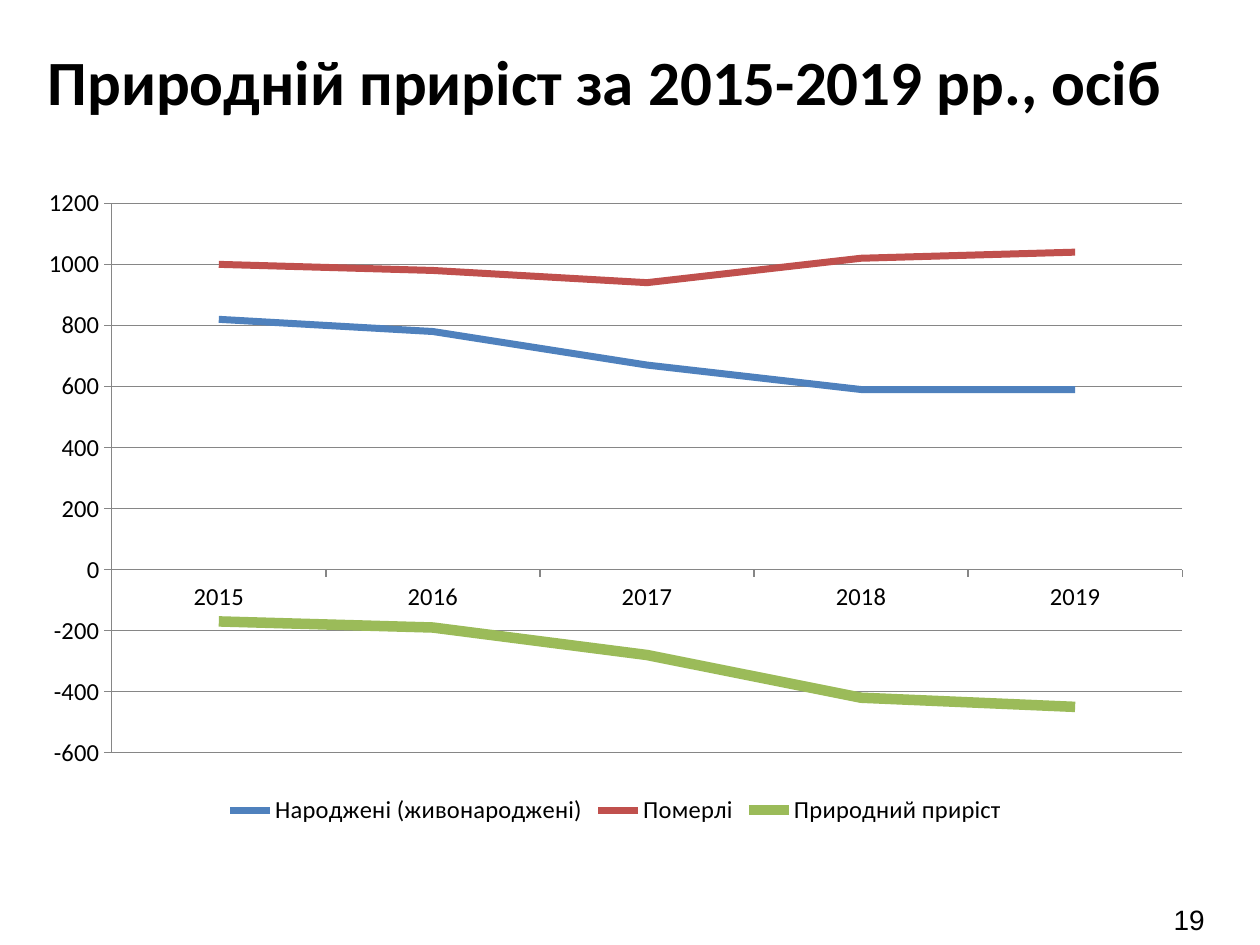
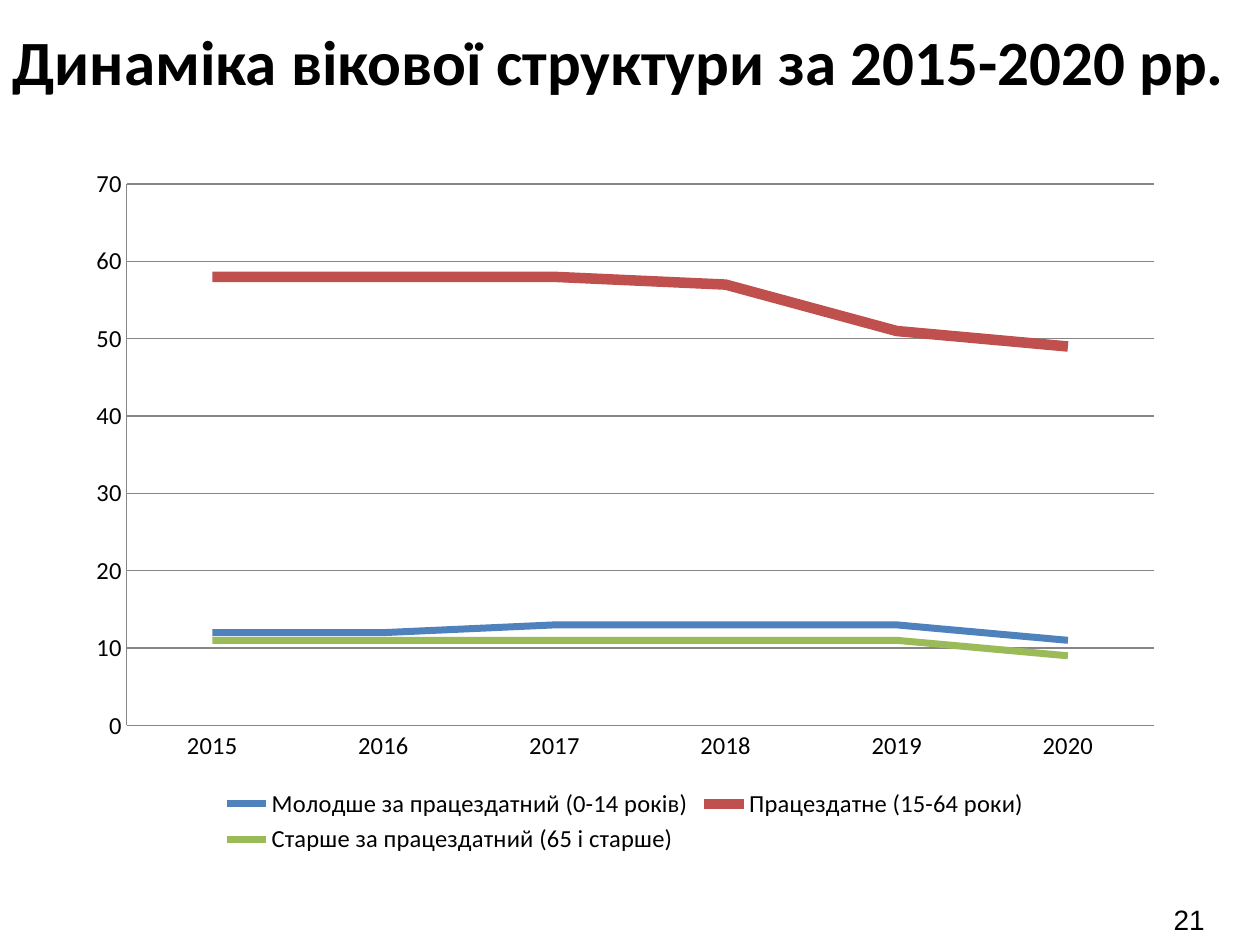
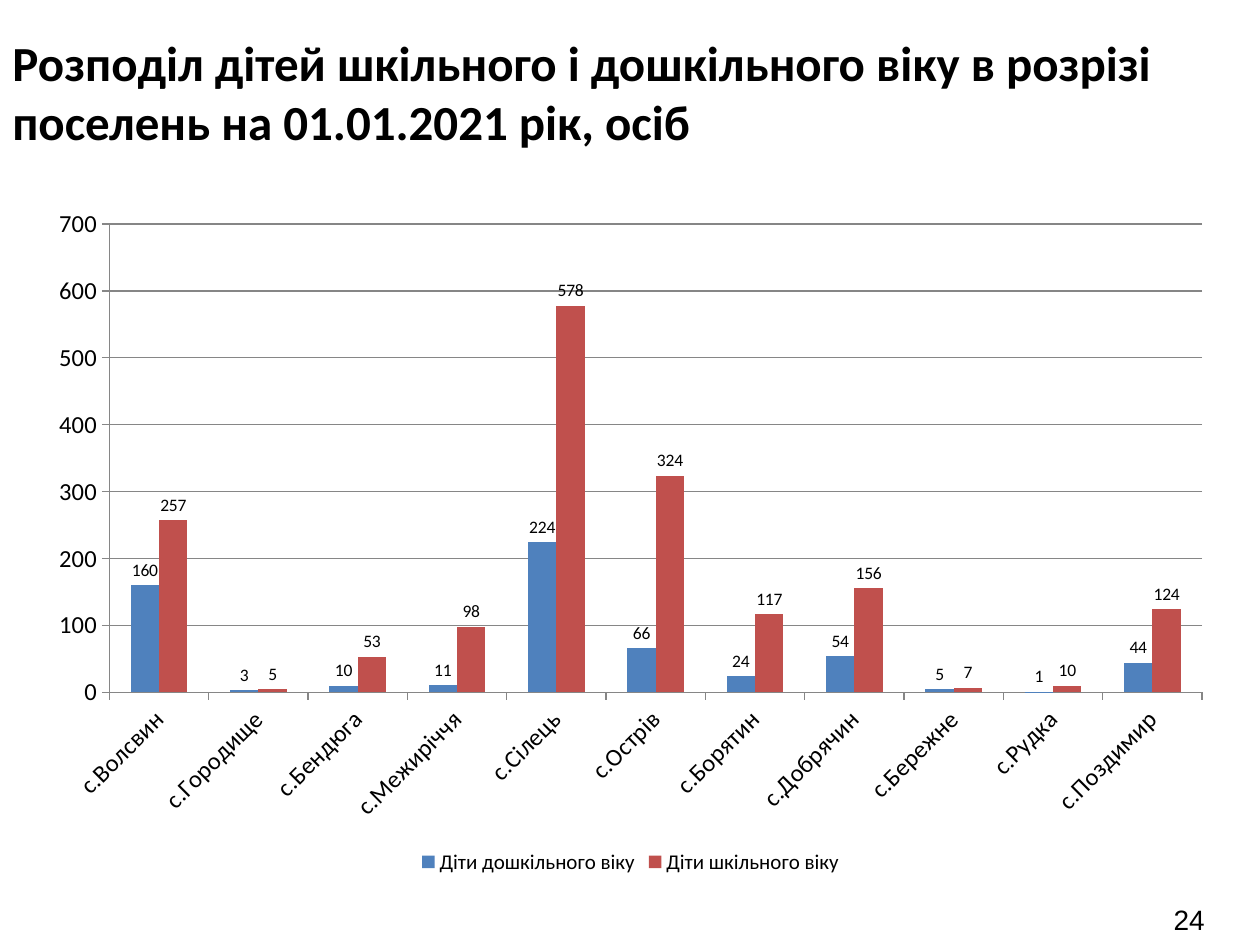
import pptx
import pptx.chart.data
import pptx.dml.color
import pptx.enum.chart
import pptx.enum.text
import pptx.util

Inches = pptx.util.Inches
Pt = pptx.util.Pt
BLACK, GRAY = "000000", "868686"
SERIES_COLORS = ["4F81BD", "C0504D", "9BBB59"]
LINE = pptx.enum.chart.XL_CHART_TYPE.LINE_MARKERS
COLUMN = pptx.enum.chart.XL_CHART_TYPE.COLUMN_CLUSTERED
TICK = pptx.enum.chart.XL_TICK_MARK


def color(value):
    return pptx.dml.color.RGBColor.from_string(value)


def add_text(slide, box, text, font_name, size, bold=False):
    shape = slide.shapes.add_textbox(*map(Inches, box))
    frame = shape.text_frame
    frame.word_wrap = True
    run = frame.paragraphs[0].add_run()
    run.text = text
    run.font.name = font_name
    run.font.size = Pt(size)
    run.font.bold = bold
    run.font.color.rgb = color(BLACK)
    return frame


slides = [
    {
        "number": "19",
        "title": "Природній приріст за 2015-2019 рр., осіб",
        "title_box": (0.28, 0.29, 9.45, 0.71),
        "title_size": 36,
        "chart_box": (0.2, 1.39, 9.37, 5.2),
        "type": LINE,
        "tick": TICK.OUTSIDE,
        "scale": (-600, 1200, 200),
        "legend_size": 14,
        "categories": ["2015", "2016", "2017", "2018", "2019"],
        "series": {
            "Народжені (живонароджені)": [820, 780, 670, 590, 590],
            "Померлі": [1000, 980, 940, 1020, 1040],
            "Природний приріст": [-170, -190, -280, -420, -450],
        },
        "bold_line": "Природний приріст",
    },
    {
        "number": "21",
        "title": "Динаміка вікової структури за 2015-2020 рр.",
        "title_box": (0, 0.13, 10, 0.71),
        "title_size": 36,
        "chart_box": (0.59, 1.23, 8.74, 5.59),
        "type": LINE,
        "tick": TICK.NONE,
        "scale": (0, 70, 10),
        "legend_size": 14,
        "categories": ["2015", "2016", "2017", "2018", "2019", "2020"],
        "series": {
            "Молодше за працездатний (0-14 років)": [12, 12, 13, 13, 13, 11],
            "Працездатне (15-64 роки)": [58, 58, 58, 57, 51, 49],
            "Старше за працездатний (65 і старше)": [11, 11, 11, 11, 11, 9],
        },
        "bold_line": "Працездатне (15-64 роки)",
    },
    {
        "number": "24",
        "title": "Розподіл дітей шкільного і дошкільного віку в розрізі поселень на 01.01.2021 рік, осіб",
        "title_box": (0, 0.21, 9.73, 1.35),
        "title_size": 28,
        "chart_box": (0.28, 1.55, 9.45, 5.43),
        "type": COLUMN,
        "tick": TICK.OUTSIDE,
        "scale": (0, 700, 100),
        "legend_size": 12,
        "categories": [
            "с.Волсвин", "с.Городище", "с.Бендюга", "с.Межиріччя", "с.Сілець", "с.Острів",
            "с.Борятин", "с.Добрячин", "с.Бережне", "с.Рудка", "с.Поздимир",
        ],
        "series": {
            "Діти дошкільного віку": [160, 3, 10, 11, 224, 66, 24, 54, 5, 1, 44],
            "Діти шкільного віку": [257, 5, 53, 98, 578, 324, 117, 156, 7, 10, 124],
        },
    },
]

presentation = pptx.Presentation()
presentation.slide_width = Inches(10)
presentation.slide_height = Inches(7.5)

for content in slides:
    slide = presentation.slides.add_slide(presentation.slide_layouts[6])

    number_frame = add_text(slide, (7.33, 7.1, 2.33, 0.4), content["number"], "Arial", 16)
    number_frame.vertical_anchor = pptx.enum.text.MSO_ANCHOR.MIDDLE
    number_frame.paragraphs[0].alignment = pptx.enum.text.PP_ALIGN.RIGHT

    chart_data = pptx.chart.data.CategoryChartData()
    chart_data.categories = content["categories"]
    for name, values in content["series"].items():
        chart_data.add_series(name, values)
    chart = slide.shapes.add_chart(
        content["type"], *map(Inches, content["chart_box"]), chart_data
    ).chart
    chart.has_title = False
    chart.font.name = "Calibri"
    chart.font.size = Pt(10)
    chart.font.color.rgb = color(BLACK)
    chart.has_legend = True
    chart.legend.position = pptx.enum.chart.XL_LEGEND_POSITION.BOTTOM
    chart.legend.include_in_layout = False
    chart.legend.font.size = Pt(content["legend_size"])

    for axis in (chart.category_axis, chart.value_axis):
        axis.major_tick_mark = content["tick"]
        axis.minor_tick_mark = TICK.NONE
        axis.tick_labels.font.size = Pt(14)
        axis.format.line.color.rgb = color(GRAY)
        axis.format.line.width = Pt(0.75)
    value_axis = chart.value_axis
    value_axis.minimum_scale, value_axis.maximum_scale, value_axis.major_unit = content["scale"]
    value_axis.has_major_gridlines = True
    value_axis.major_gridlines.format.line.color.rgb = color(GRAY)
    value_axis.major_gridlines.format.line.width = Pt(0.75)

    plot = chart.plots[0]
    plot.vary_by_categories = False
    for series, series_color in zip(plot.series, SERIES_COLORS):
        if content["type"] == LINE:
            series.smooth = False
            series.marker.style = pptx.enum.chart.XL_MARKER_STYLE.NONE
            series.format.line.color.rgb = color(series_color)
            series.format.line.width = Pt(6 if series.name == content["bold_line"] else 4)
        else:
            series.format.fill.solid()
            series.format.fill.fore_color.rgb = color(series_color)
            series.invert_if_negative = False
    if content["type"] == COLUMN:
        plot.gap_width = 150
        plot.has_data_labels = True
        plot.data_labels.show_value = True
        plot.data_labels.font.size = Pt(10)
        plot.data_labels.position = pptx.enum.chart.XL_LABEL_POSITION.OUTSIDE_END
        chart.category_axis._element.txPr.bodyPr.set("rot", "-2700000")

    add_text(
        slide, content["title_box"], content["title"], "Calibri", content["title_size"], bold=True
    )

presentation.save("out.pptx")
